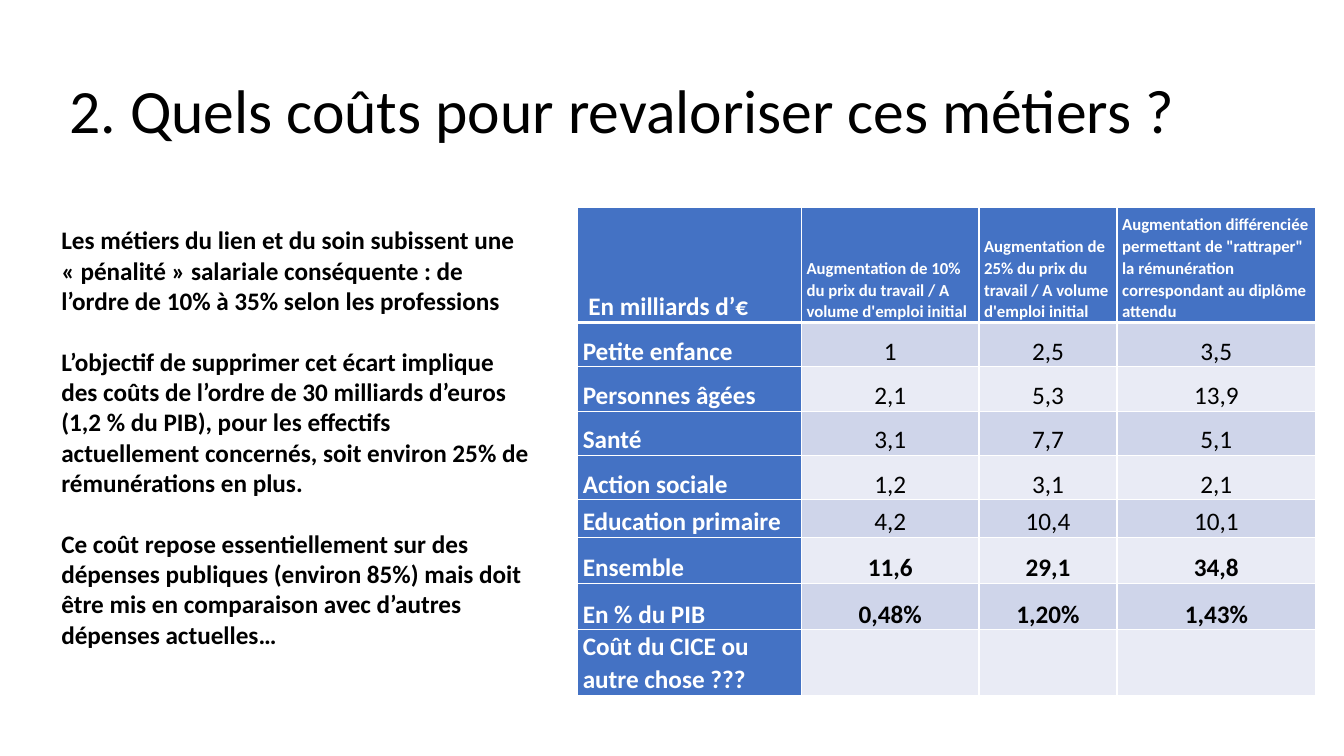
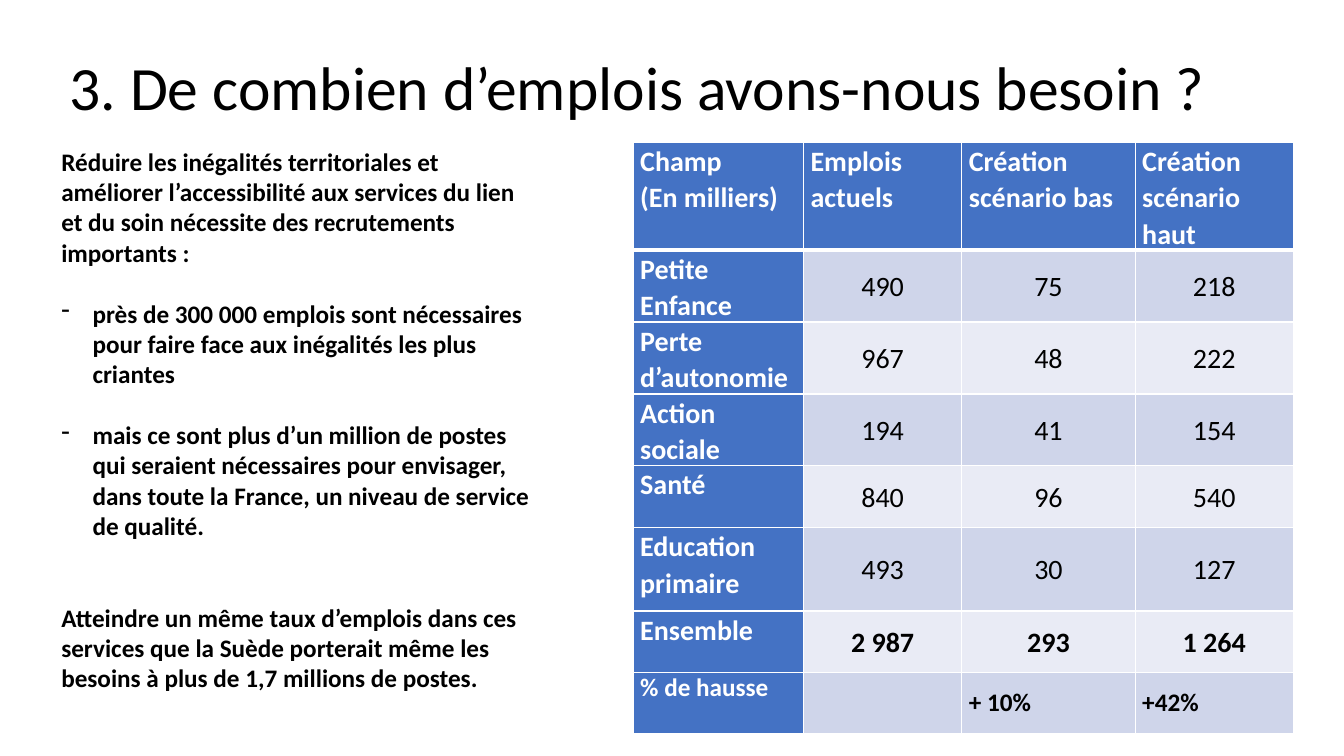
from pptx import Presentation
from pptx.dml.color import RGBColor
from pptx.enum.text import MSO_ANCHOR, MSO_AUTO_SIZE, PP_ALIGN
from pptx.oxml.ns import qn
from pptx.util import Inches, Pt
from lxml import etree

LEFT, CENTER = PP_ALIGN.LEFT, PP_ALIGN.CENTER
TOP, MIDDLE, BOTTOM = MSO_ANCHOR.TOP, MSO_ANCHOR.MIDDLE, MSO_ANCHOR.BOTTOM
GROW = MSO_AUTO_SIZE.SHAPE_TO_FIT_TEXT

FONT = "Calibri"
BLACK, WHITE, BLUE = "000000", "FFFFFF", "4472C4"
BANDS = ("CFD5EA", "E9EBF5")
TITLE_SIZE, BODY_SIZE, BODY_LINE = 44, 18, 22
TITLE_LEFT, TITLE_TOP, TITLE_WIDTH = 0.59, 0.4, 11.83
BODY_LEFT, BODY_WIDTH = 0.51, 4.87
DASH_INDENT = 0.31
THIN, THICK = 1, 3

COSTS = [
    (" En milliards d’€",
     "Augmentation de 10% du prix du travail / A volume d'emploi initial",
     "Augmentation de 25% du prix du travail / A volume d'emploi initial",
     "Augmentation différenciée permettant de \"rattraper\" la rémunération "
     "correspondant au diplôme attendu"),
    ("Petite enfance", "1", "2,5", "3,5"),
    ("Personnes âgées", "2,1", "5,3", "13,9"),
    ("Santé", "3,1", "7,7", "5,1"),
    ("Action sociale", "1,2", "3,1", "2,1"),
    ("Education primaire", "4,2", "10,4", "10,1"),
    ("Ensemble", "11,6", "29,1", "34,8"),
    ("En % du PIB", "0,48%", "1,20%", "1,43%"),
    ("Coût du CICE ou autre chose ???", "", "", ""),
]
COST_TEXT = [
    ("Les métiers du lien et du soin subissent une « pénalité » salariale "
     "conséquente : de l’ordre de 10% à 35% selon les professions", 0, False),
    ("L’objectif de supprimer cet écart implique des coûts de l’ordre de "
     "30 milliards d’euros (1,2 % du PIB), pour les effectifs actuellement "
     "concernés, soit environ 25% de rémunérations en plus.", 1, False),
    ("Ce coût repose essentiellement sur des dépenses publiques (environ 85%) "
     "mais doit être mis en comparaison avec d’autres dépenses actuelles…", 1, False),
]
JOBS = [
    ("Champ\n(En milliers)", "Emplois actuels", "Création scénario bas",
     "Création scénario haut"),
    ("Petite Enfance", "490", "75", "218"),
    ("Perte d’autonomie", "967", "48", "222"),
    ("Action sociale", "194", "41", "154"),
    ("Santé", "840", "96", "540"),
    ("Education primaire", "493", "30", "127"),
    ("Ensemble", "2 987", "293", "1 264"),
    ("% de hausse", "", "+ 10%", "+42%"),
]
JOB_TEXT = [
    ("Réduire les inégalités territoriales et améliorer l’accessibilité aux "
     "services du lien et du soin nécessite des recrutements importants :", 0, False),
    ("près de 300 000 emplois sont nécessaires pour faire face aux inégalités "
     "les plus criantes", 1, True),
    ("mais ce sont plus d’un million de postes qui seraient nécessaires pour "
     "envisager, dans toute la France, un niveau de service de qualité.", 1, True),
    ("Atteindre un même taux d’emplois dans ces services que la Suède porterait "
     "même les besoins à plus de 1,7 millions de postes.", 2, False),
]


def color(value):
    return RGBColor.from_string(value)


def style_para(para, size, text_color=BLACK, bold=False, align=LEFT, spacing=1.0):
    para.font.name = FONT
    para.font.size = Pt(size)
    para.font.bold = bold
    para.font.color.rgb = color(text_color)
    para.alignment = align
    para.line_spacing = spacing


def add_box(page, left, top, width, height):
    box = page.shapes.add_textbox(*map(Inches, (left, top, width, height)))
    box.text_frame.word_wrap = True
    return box.text_frame


def add_title(page, text, height):
    frame = add_box(page, TITLE_LEFT, TITLE_TOP, TITLE_WIDTH, height)
    frame.vertical_anchor = MIDDLE
    frame.text = text
    style_para(frame.paragraphs[0], TITLE_SIZE, spacing=0.9)


def add_dash(para):
    properties = para._p.get_or_add_pPr()
    properties.set("marL", str(Inches(DASH_INDENT)))
    properties.set("indent", str(-Inches(DASH_INDENT)))
    etree.SubElement(properties, qn("a:buFontTx"))
    etree.SubElement(properties, qn("a:buChar")).set("char", "-")


def add_body(page, items, top, height):
    """Items are (text, blank lines before, dashed)."""
    frame = add_box(page, BODY_LEFT, top, BODY_WIDTH, height)
    frame.auto_size = GROW
    frame.text = "\n".join(text for text, _, _ in items)
    for para, (_, gap, dashed) in zip(frame.paragraphs, items):
        style_para(para, BODY_SIZE, bold=True)
        para.space_before = Pt(gap * BODY_LINE)
        if dashed:
            add_dash(para)


def set_borders(cell, row):
    """White rules all round, thicker between the header and the first row."""
    properties = cell._tc.get_or_add_tcPr()
    widths = {"lnL": THIN, "lnR": THIN,
              "lnT": THICK if row == 1 else THIN,
              "lnB": THICK if row == 0 else THIN}
    for side, width in widths.items():
        line = etree.SubElement(properties, qn(f"a:{side}"), w=str(Pt(width)))
        fill = etree.SubElement(line, qn("a:solidFill"))
        etree.SubElement(fill, qn("a:srgbClr"), val=WHITE)


def add_table(page, rows, left, top, widths, heights, inset, style_for):
    """style_for(row, column) gives size, bold, align, anchor and spacing."""
    shape = page.shapes.add_table(
        len(rows), len(widths), Inches(left), Inches(top),
        Inches(sum(widths)), Inches(sum(heights)))
    table = shape.table
    for column, width in zip(table.columns, widths):
        column.width = Inches(width)
    for r, (texts, height) in enumerate(zip(rows, heights)):
        table.rows[r].height = Inches(height)
        for c, text in enumerate(texts):
            cell = table.cell(r, c)
            heading = r == 0 or c == 0
            size, bold, align, anchor, spacing = style_for(r, c)
            set_borders(cell, r)
            cell.fill.solid()
            cell.fill.fore_color.rgb = color(BLUE if heading else BANDS[(r - 1) % 2])
            cell.margin_left = cell.margin_right = Inches(inset)
            cell.margin_top = cell.margin_bottom = 0
            cell.vertical_anchor = anchor
            cell.text = text
            for para in cell.text_frame.paragraphs:
                style_para(para, size, WHITE if heading else BLACK,
                           bold, align, spacing)


def cost_style(row, column):
    heading = row == 0 or column == 0
    size = 12 if row == 0 and column > 0 else 18
    return size, heading or row >= 6, LEFT if heading else CENTER, BOTTOM, 1.07


def job_style(row, column):
    heading = row == 0 or column == 0
    last = row == len(JOBS) - 1
    return (18 if last else 20, heading or row >= 6,
            LEFT if heading or last else CENTER,
            TOP if heading else MIDDLE, 1.0 if last else 1.07)


def build_costs(page):
    add_title(page, "2. Quels coûts pour revaloriser ces métiers ?", 1.45)
    add_table(page, COSTS, 5.73, 2.06, (2.22, 1.76, 1.37, 1.97),
              (1.14, *[0.44] * 4, 0.37, 0.46, 0.46, 0.65), 0.05, cost_style)
    add_body(page, COST_TEXT, 2.18, 4.34)


def build_jobs(page):
    add_title(page, "3. De combien d’emplois avons-nous besoin ?", 1)
    add_body(page, JOB_TEXT, 1.4, 5.55)
    add_table(page, JOBS, 6.28, 1.41, (1.69, 1.57, 1.72, 1.57),
              (1.07, *[0.71] * 3, 0.61, 0.83, 0.61, 0.61), 0.07, job_style)


def main():
    deck = Presentation()
    deck.slide_width, deck.slide_height = Inches(13.33), Inches(7.5)
    for build in (build_costs, build_jobs):
        build(deck.slides.add_slide(deck.slide_layouts[6]))
    deck.save("out.pptx")


if __name__ == "__main__":
    main()
